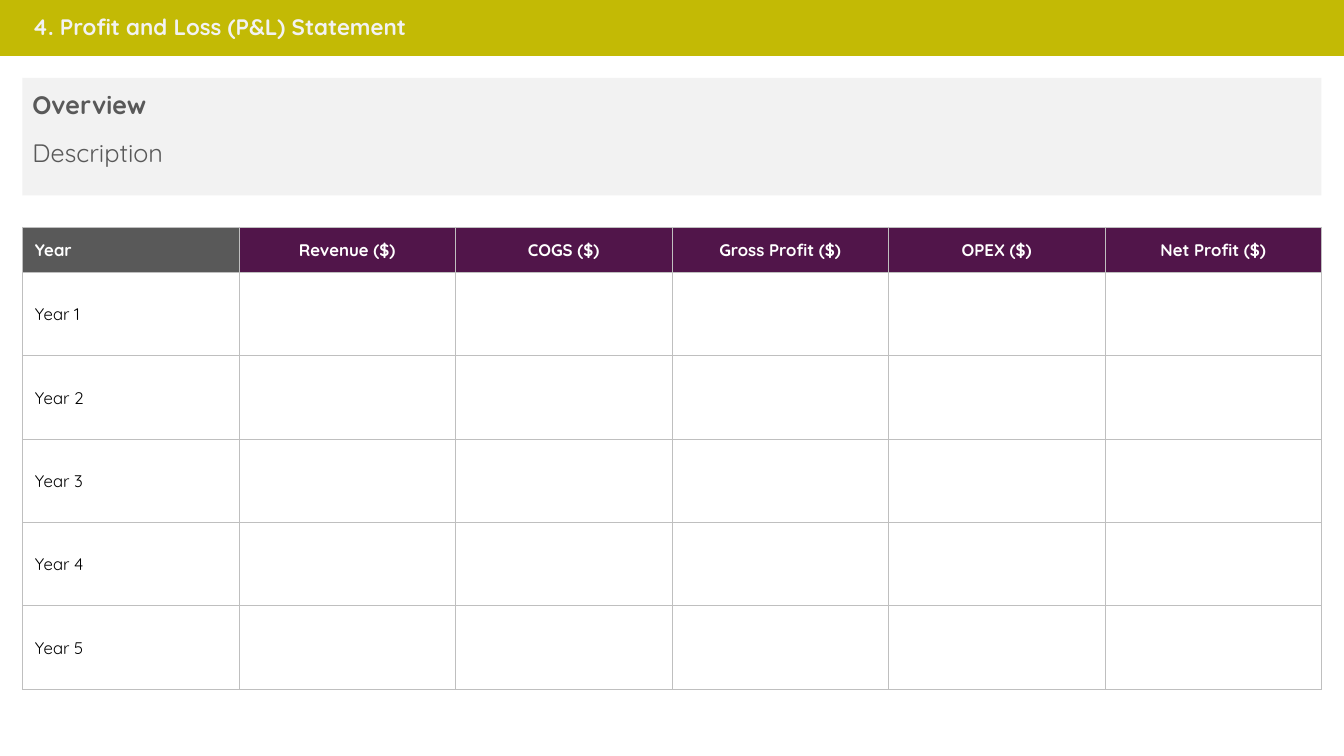
from lxml.etree import SubElement
from pptx import Presentation
from pptx.dml.color import RGBColor
from pptx.enum.shapes import MSO_SHAPE
from pptx.enum.text import MSO_ANCHOR, MSO_AUTO_SIZE, PP_ALIGN
from pptx.oxml.ns import qn
from pptx.util import Pt

FONT = "Quicksand"
MARGIN, CONTENT_W = 16, 928
HEADERS = ["Year", "Revenue ($)", "COGS ($)", "Gross Profit ($)", "OPEX ($)", "Net Profit ($)"]
YEARS = 5


def rgb(value):
    return RGBColor.from_string(value)


def style(p, size, color, bold):
    for r in p.runs:
        r.font.name = FONT
        r.font.size = Pt(size)
        r.font.bold = bold
        r.font.color.rgb = rgb(color)


prs = Presentation()
prs.slide_width, prs.slide_height = Pt(960), Pt(540)
s = prs.slides.add_slide(prs.slide_layouts[6])

for x, y, w, h, color, line_w in [
    (MARGIN, 55.6, CONTENT_W, 84, "F2F2F2", 0),
    (0, 0, 960, 39.2, "C3BA05", 1.5),
]:
    sp = s.shapes.add_shape(MSO_SHAPE.RECTANGLE, Pt(x), Pt(y), Pt(w), Pt(h))
    sp.shadow.inherit = False
    sp.fill.solid()
    sp.fill.fore_color.rgb = rgb(color)
    if line_w:
        sp.line.color.rgb = rgb(color)
        sp.line.width = Pt(line_w)
    else:
        sp.line.fill.background()

for text, y, w, h, size, color, bold in [
    ("Overview", 60.48, 500.4, 28.8, 18, "595959", True),
    ("Description", 94.32, 828, 28.8, 18, "595959", False),
    ("4. Profit and Loss (P&L) Statement", 6.1, 581.76, 26.64, 16, "F2F2F2", True),
]:
    sp = s.shapes.add_textbox(Pt(MARGIN), Pt(y), Pt(w), Pt(h))
    tf = sp.text_frame
    tf.word_wrap = True
    tf.auto_size = MSO_AUTO_SIZE.SHAPE_TO_FIT_TEXT
    tf.text = text
    style(tf.paragraphs[0], size, color, bold)

header_h, year_h = 32.2, 59.6
table = s.shapes.add_table(
    YEARS + 1, len(HEADERS), Pt(MARGIN), Pt(162.2), Pt(CONTENT_W), Pt(header_h + YEARS * year_h)
).table
table.horz_banding = False
for col in table.columns:
    col.width = Pt(CONTENT_W / len(HEADERS))
for i, row in enumerate(table.rows):
    row.height = Pt(year_h if i else header_h)
    for j, cell in enumerate(row.cells):
        tc_pr = cell._tc.get_or_add_tcPr()
        for side in ("a:lnL", "a:lnR", "a:lnT", "a:lnB"):
            ln = SubElement(tc_pr, qn(side), w=str(Pt(0.5)))
            SubElement(SubElement(ln, qn("a:solidFill")), qn("a:srgbClr"), val="BFBFBF")
        if i and j:
            cell.fill.background()
            continue
        if i == 0:
            text, color = HEADERS[j], "FFFFFF"
            fill = "51154A" if j else "595959"
        else:
            text, color, fill = f"Year {i}", "000000", "FFFFFF"
        cell.fill.solid()
        cell.fill.fore_color.rgb = rgb(fill)
        cell.vertical_anchor = MSO_ANCHOR.MIDDLE
        cell.margin_left = Pt(0.75 if j else 9)
        cell.margin_right = cell.margin_top = Pt(0.75)
        cell.margin_bottom = Pt(0)
        cell.text = text
        p = cell.text_frame.paragraphs[0]
        p.alignment = PP_ALIGN.CENTER if j else PP_ALIGN.LEFT
        style(p, 12, color, i == 0)

prs.save("out.pptx")
